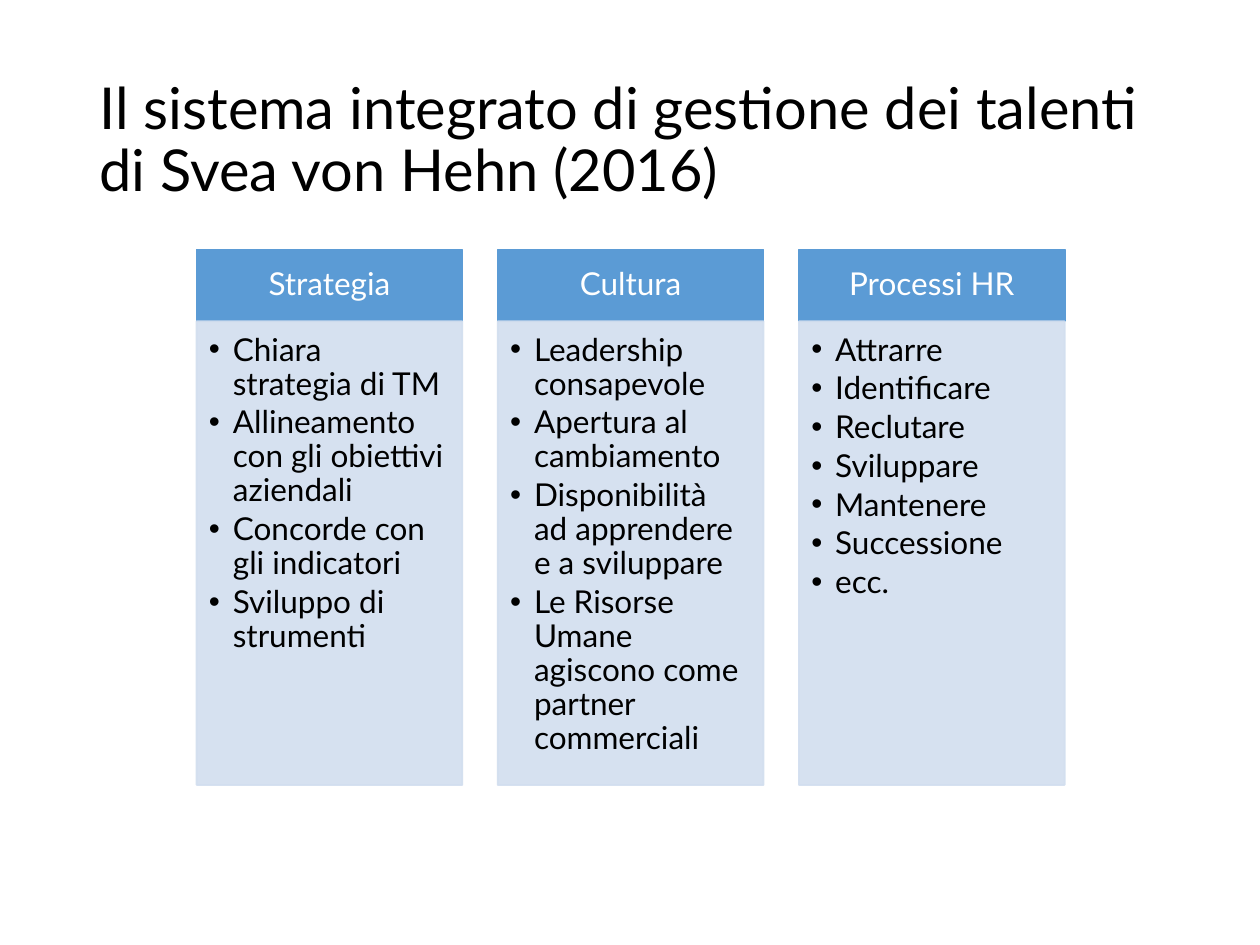
"""Build the slide on the integrated talent management system."""
from pptx import Presentation
from pptx.dml import color
from pptx.enum import shapes, text
from pptx.oxml import ns
from pptx.util import Inches, Pt
from lxml import etree

FONT = "Lato"
BLUE, PALE_BLUE, BLACK, WHITE = "5B9BD5", "D2DEEF", "000000", "FFFFFF"
FIRST_LEFT, COLUMN_STEP, COLUMN_WIDTH = 1.56, 2.39, 2.11
HEADER_TOP, HEADER_HEIGHT, LIST_HEIGHT = 1.98, 0.57, 3.68
TITLE = "Il sistema integrato di gestione dei talenti di Svea von Hehn (2016)"
COLUMNS = {
    "Strategia": [
        "Chiara strategia di TM",
        "Allineamento con gli obiettivi aziendali",
        "Concorde con gli indicatori",
        "Sviluppo di strumenti",
    ],
    "Cultura": [
        "Leadership consapevole",
        "Apertura al cambiamento",
        "Disponibilità ad apprendere e a sviluppare",
        "Le Risorse Umane agiscono come partner commerciali",
    ],
    "Processi HR": [
        "Attrarre",
        "Identificare",
        "Reclutare",
        "Sviluppare",
        "Mantenere",
        "Successione",
        "ecc.",
    ],
}


def rgb(value):
    """Turn a hex string into a colour."""
    return color.RGBColor.from_string(value)


def write_run(paragraph, words, size, hex_color):
    """Add one formatted run to a tightly spaced paragraph."""
    paragraph.line_spacing = 0.9
    run = paragraph.add_run()
    run.text = words
    run.font.name = FONT
    run.font.size = Pt(size)
    run.font.color.rgb = rgb(hex_color)


def set_insets(frame, left, top, right, bottom):
    """Set the inner margins of a text frame in inches."""
    frame.margin_left, frame.margin_top = Inches(left), Inches(top)
    frame.margin_right, frame.margin_bottom = Inches(right), Inches(bottom)


def set_opacity(shape, percent):
    """Make the fill and the outline of a shape partly transparent."""
    for clr in shape._element.spPr.iter(ns.qn("a:srgbClr")):
        etree.SubElement(clr, ns.qn("a:alpha"), val=str(percent * 1000))


def add_bullet(paragraph):
    """Give a paragraph a hanging bullet."""
    properties = paragraph._p.get_or_add_pPr()
    indent = Inches(0.19)
    properties.set("marL", str(indent))
    properties.set("indent", str(-indent))
    etree.SubElement(properties, ns.qn("a:buFont"), typeface="Arial")
    etree.SubElement(properties, ns.qn("a:buChar"), char="•")


def add_box(slide, left, top, height, hex_color):
    """Add a flat rectangle as wide as a column."""
    shape = slide.shapes.add_shape(
        shapes.MSO_SHAPE.RECTANGLE,
        Inches(left), Inches(top), Inches(COLUMN_WIDTH), Inches(height))
    shape.shadow.inherit = False
    shape.fill.solid()
    shape.fill.fore_color.rgb = rgb(hex_color)
    shape.line.color.rgb = rgb(hex_color)
    shape.line.width = Pt(1)
    shape.text_frame.word_wrap = True
    return shape


def add_header(slide, left, heading):
    """Add the heading box of a column."""
    frame = add_box(slide, left, HEADER_TOP, HEADER_HEIGHT, BLUE).text_frame
    set_insets(frame, 0.14, 0.08, 0.14, 0.08)
    frame.vertical_anchor = text.MSO_ANCHOR.MIDDLE
    paragraph = frame.paragraphs[0]
    paragraph.alignment = text.PP_ALIGN.CENTER
    write_run(paragraph, heading, 18, WHITE)


def add_list(slide, left, items):
    """Add the bulleted box of a column."""
    top = HEADER_TOP + HEADER_HEIGHT
    shape = add_box(slide, left, top, LIST_HEIGHT, PALE_BLUE)
    set_opacity(shape, 90)
    frame = shape.text_frame
    set_insets(frame, 0.1, 0.1, 0.14, 0.16)
    frame.vertical_anchor = text.MSO_ANCHOR.TOP
    for index, item in enumerate(items):
        paragraph = frame.add_paragraph() if index else frame.paragraphs[0]
        paragraph.alignment = text.PP_ALIGN.LEFT
        paragraph.space_after = Pt(2.7)
        write_run(paragraph, item, 18, BLACK)
        add_bullet(paragraph)


def fill_title(slide):
    """Place and write the slide title."""
    title = slide.shapes.title
    title.left, title.top = Inches(0.69), Inches(0.4)
    title.width, title.height = Inches(8.62), Inches(1.45)
    frame = title.text_frame
    frame.auto_size = text.MSO_AUTO_SIZE.NONE
    frame.vertical_anchor = text.MSO_ANCHOR.MIDDLE
    paragraph = frame.paragraphs[0]
    paragraph.alignment = text.PP_ALIGN.LEFT
    write_run(paragraph, TITLE, 33, BLACK)


def main():
    """Build and save the presentation."""
    presentation = Presentation()
    presentation.slide_width, presentation.slide_height = Inches(10), Inches(7.5)
    slide = presentation.slides.add_slide(presentation.slide_layouts[5])
    fill_title(slide)
    for index, (heading, items) in enumerate(COLUMNS.items()):
        left = FIRST_LEFT + index * COLUMN_STEP
        add_header(slide, left, heading)
        add_list(slide, left, items)
    presentation.save("out.pptx")


if __name__ == "__main__":
    main()
